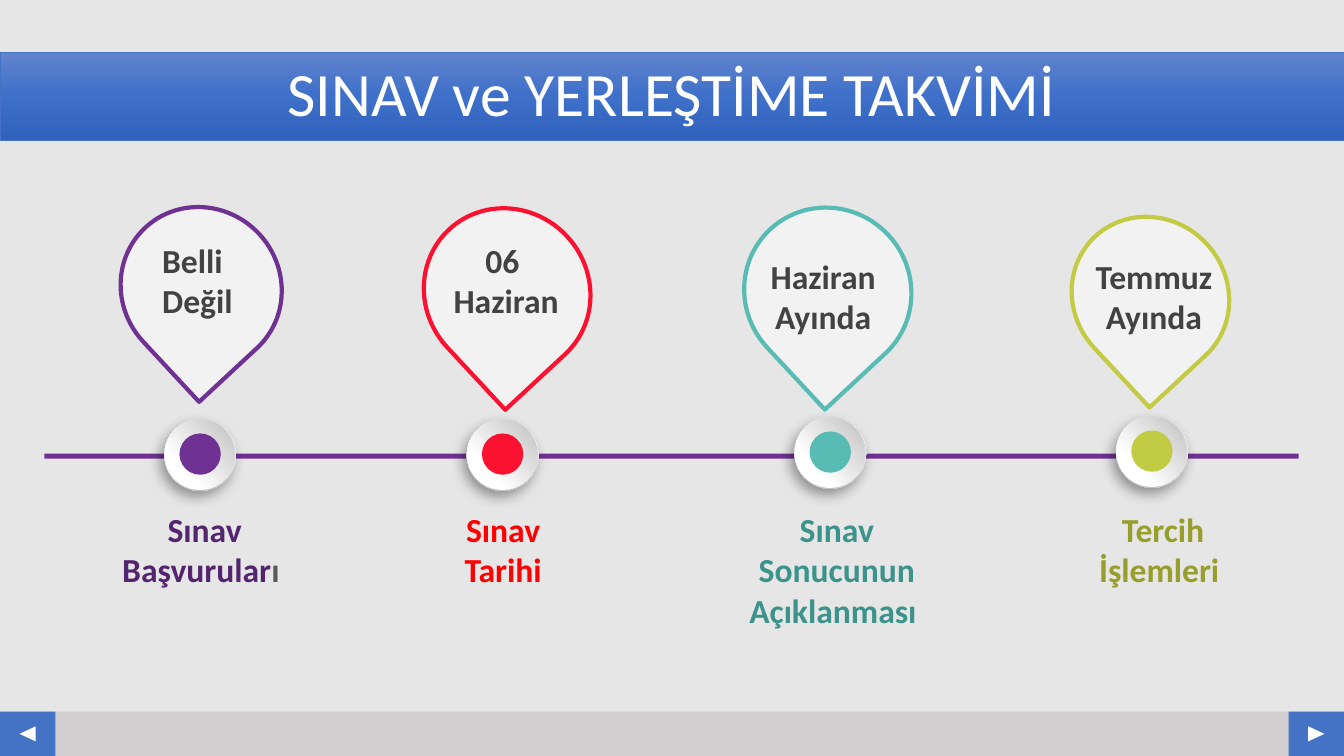
from dataclasses import dataclass

from lxml.etree import SubElement
from pptx import Presentation
from pptx.dml.color import RGBColor
from pptx.enum.shapes import MSO_SHAPE
from pptx.enum.text import MSO_ANCHOR, PP_ALIGN
from pptx.oxml.ns import qn
from pptx.util import Inches, Pt

FONT = "Calibri"
BACKGROUND = RGBColor(0xE7, 0xE6, 0xE6)
FOOTER_GREY = RGBColor(0xD0, 0xCE, 0xCE)
BLUE = RGBColor(0x44, 0x72, 0xC4)
BAND_TOP = RGBColor(0x61, 0x83, 0xCB)
BAND_MIDDLE = RGBColor(0x3E, 0x70, 0xCA)
BAND_BOTTOM = RGBColor(0x30, 0x62, 0xBB)
WHITE = RGBColor(0xFF, 0xFF, 0xFF)
BLACK = RGBColor(0x00, 0x00, 0x00)
RIM_GREY = RGBColor(0xB8, 0xB8, 0xB8)
FACE_GREY = RGBColor(0xBF, 0xBF, 0xBF)
PIN_FILL = RGBColor(0xF2, 0xF2, 0xF2)
PIN_TEXT = RGBColor(0x42, 0x42, 0x42)
LETTER_GREY = RGBColor(0x59, 0x59, 0x59)
PURPLE = RGBColor(0x6F, 0x32, 0x93)
DARK_PURPLE = RGBColor(0x53, 0x25, 0x6E)
CRIMSON = RGBColor(0xFA, 0x12, 0x30)
RED = RGBColor(0xFF, 0x00, 0x00)
TEAL = RGBColor(0x58, 0xBB, 0xB4)
DARK_TEAL = RGBColor(0x3C, 0x93, 0x8C)
LIME = RGBColor(0xC2, 0xCB, 0x44)
OLIVE = RGBColor(0x97, 0x9F, 0x2C)


@dataclass
class Milestone:
    color: RGBColor
    bead: tuple        # left, top
    pin: tuple         # left, top, width, height
    date: list         # one entry per line
    date_box: tuple
    caption: list      # (text, color) spans
    caption_box: tuple
    date_align: PP_ALIGN = PP_ALIGN.CENTER


MILESTONES = [
    Milestone(PURPLE, (1.63, 4.16), (1.21, 2.04, 1.57, 1.63),
              ["Belli", "Değil"], (1.51, 2.33, 0.91, 0.91),
              [("Sınav Başvurular", DARK_PURPLE), ("ı ", LETTER_GREY)],
              (1.08, 5, 1.9, 0.91), PP_ALIGN.LEFT),
    Milestone(CRIMSON, (4.63, 4.16), (4.22, 2.05, 1.62, 1.69),
              ["06 ", "Haziran"], (4.39, 2.33, 1.26, 0.91),
              [("Sınav Tarihi", RED)], (4.15, 5, 1.68, 0.91)),
    Milestone(TEAL, (7.88, 4.14), (7.39, 2.05, 1.64, 1.68),
              [" Haziran ", "Ayında"], (7.46, 2.49, 1.41, 1.31),
              [("Sınav Sonucunun Açıklanması ", DARK_TEAL)],
              (7.22, 5, 2.16, 1.31)),
    Milestone(LIME, (11.07, 4.13), (10.65, 2.13, 1.52, 1.61),
              ["Temmuz", "Ayında"], (10.76, 2.49, 1.37, 0.91),
              [("Tercih İşlemleri ", OLIVE)], (10.76, 5, 1.55, 0.91)),
]


def add_color(parent, color, alpha=None):
    node = SubElement(parent, qn("a:srgbClr"), val=str(color))
    if alpha is not None:
        SubElement(node, qn("a:alpha"), val=str(alpha * 1000))


def add_figure(page, kind, frame, fill=None, line=None, line_width=1, rotation=0):
    shape = page.shapes.add_shape(kind, *map(Inches, frame))
    shape.shadow.inherit = False
    shape.rotation = rotation
    if fill is not None:
        shape.fill.solid()
        shape.fill.fore_color.rgb = fill
    if line is None:
        shape.line.fill.background()
    else:
        shape.line.color.rgb = line
        shape.line.width = Pt(line_width)
    return shape


def set_gradient(shape, stops, angle):
    """Angle runs clockwise, in degrees; stops are (percent, color)."""
    shape.fill.gradient()
    shape.fill.gradient_angle = 360 - angle
    stop_list = shape._element.spPr.find(".//" + qn("a:gsLst"))
    for old_stop in list(stop_list):
        stop_list.remove(old_stop)
    for percent, color in stops:
        add_color(SubElement(stop_list, qn("a:gs"), pos=str(percent * 1000)), color)


def add_shadow(shape, alpha, blur, distance, direction):
    effects = shape._element.spPr.find(qn("a:effectLst"))
    shadow = SubElement(effects, qn("a:outerShdw"), blurRad=str(Pt(blur)),
                        dist=str(Pt(distance)), dir=str(direction * 60000),
                        algn="ctr", rotWithShape="0")
    add_color(shadow, BLACK, alpha)


def write_text(frame, lines, *, size=24, bold=True, align=PP_ALIGN.CENTER,
               wrap=True, anchor=MSO_ANCHOR.TOP, spacing=None):
    """Each line is a list of (text, color) spans."""
    frame.word_wrap = wrap
    frame.vertical_anchor = anchor
    for index, spans in enumerate(lines):
        para = frame.add_paragraph() if index else frame.paragraphs[0]
        para.alignment = align
        para.line_spacing = spacing
        for text, color in spans:
            span = para.add_run()
            span.text = text
            span.font.name = FONT
            span.font.size = Pt(size)
            span.font.bold = bold
            span.font.color.rgb = color


def add_label(page, frame, lines, **text_format):
    box = page.shapes.add_textbox(*map(Inches, frame))
    write_text(box.text_frame, lines, **text_format)


def add_footer(page):
    top, height, button = 7.06, 0.44, 0.55
    add_figure(page, MSO_SHAPE.RECTANGLE, (0, top, 13.33, height), FOOTER_GREY)
    for left, rotation in ((0, 270), (13.33 - button, 90)):
        add_figure(page, MSO_SHAPE.RECTANGLE, (left, top, button, height), BLUE)
        add_figure(page, MSO_SHAPE.ISOSCELES_TRIANGLE,
                   (left + 0.2, top + 0.14, 0.15, 0.16), WHITE, rotation=rotation)


def add_title(page):
    band = add_figure(page, MSO_SHAPE.RECTANGLE, (0, 0.52, 13.33, 0.87),
                      line=BLUE, line_width=0.5)
    set_gradient(band, [(0, BAND_TOP), (50, BAND_MIDDLE), (100, BAND_BOTTOM)], 90)
    write_text(band.text_frame, [[("SINAV ve YERLEŞTİME TAKVİMİ", WHITE)]],
               size=44, bold=False, anchor=MSO_ANCHOR.MIDDLE, spacing=0.9)


def add_bead(page, left, top, color):
    rim = add_figure(page, MSO_SHAPE.OVAL, (left, top, 0.71, 0.71), rotation=62.3)
    set_gradient(rim, [(17, WHITE), (88, RIM_GREY)], 45)
    add_shadow(rim, alpha=39, blur=10, distance=5, direction=123)
    face = add_figure(page, MSO_SHAPE.OVAL, (left, top, 0.7, 0.7), rotation=273)
    set_gradient(face, [(29, WHITE), (98, FACE_GREY)], 45)
    add_figure(page, MSO_SHAPE.OVAL, (left + 0.15, top + 0.14, 0.41, 0.41), color)


def add_milestone(page, item):
    add_bead(page, *item.bead, item.color)
    add_figure(page, MSO_SHAPE.TEAR, item.pin, PIN_FILL, item.color, 3, 137.1)
    add_label(page, item.date_box, [[(line, PIN_TEXT)] for line in item.date],
              align=item.date_align, wrap=False)
    add_label(page, item.caption_box, [item.caption])


def main():
    deck = Presentation()
    deck.slide_width, deck.slide_height = Inches(13.33), Inches(7.5)
    page = deck.slides.add_slide(deck.slide_layouts[6])
    page.background.fill.solid()
    page.background.fill.fore_color.rgb = BACKGROUND

    # Frame of the page
    add_footer(page)
    add_title(page)

    # Timeline with its milestones
    add_figure(page, MSO_SHAPE.RECTANGLE, (0.44, 4.5, 12.44, 0.05), PURPLE)
    for item in MILESTONES:
        add_milestone(page, item)

    deck.save("out.pptx")


if __name__ == "__main__":
    main()
